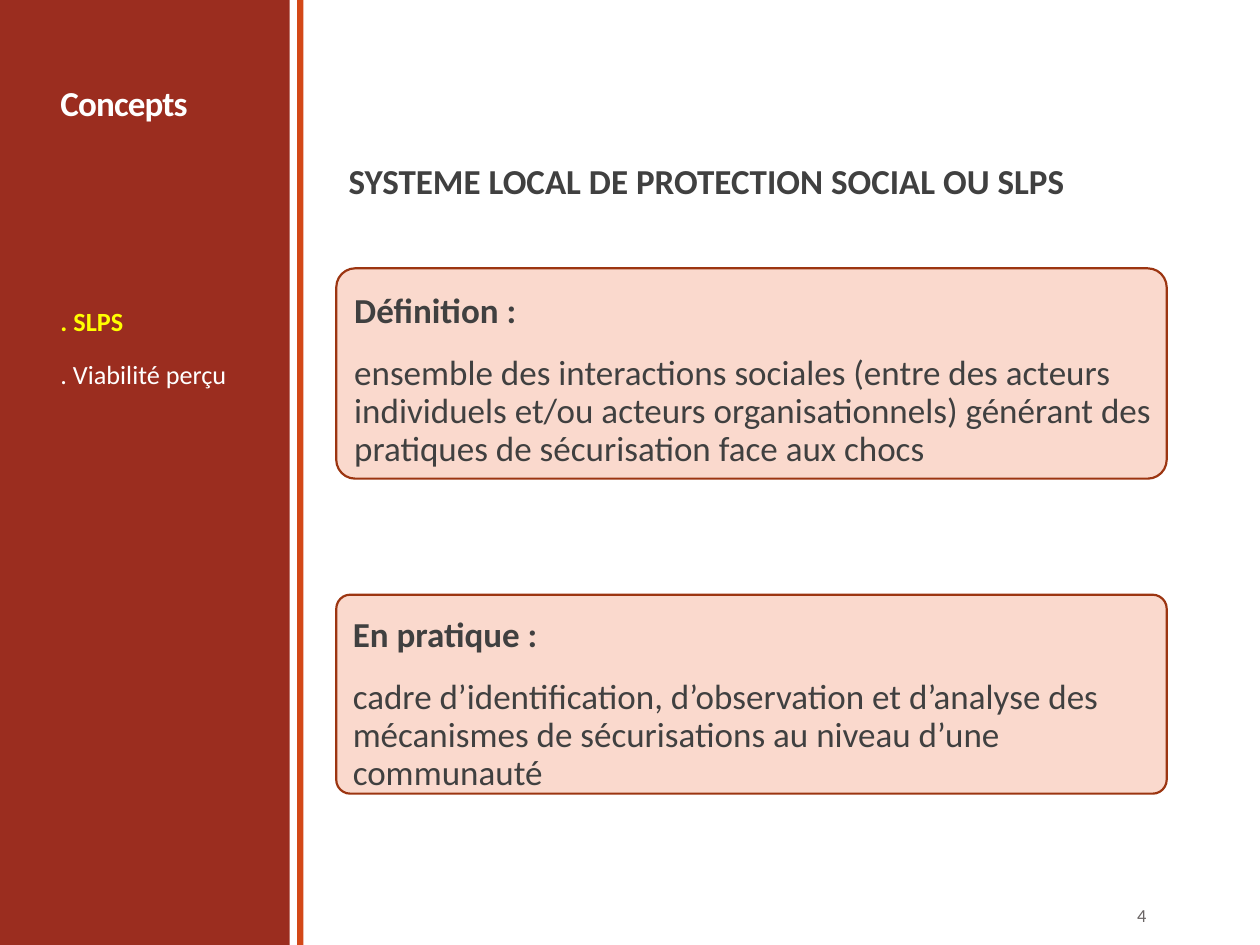
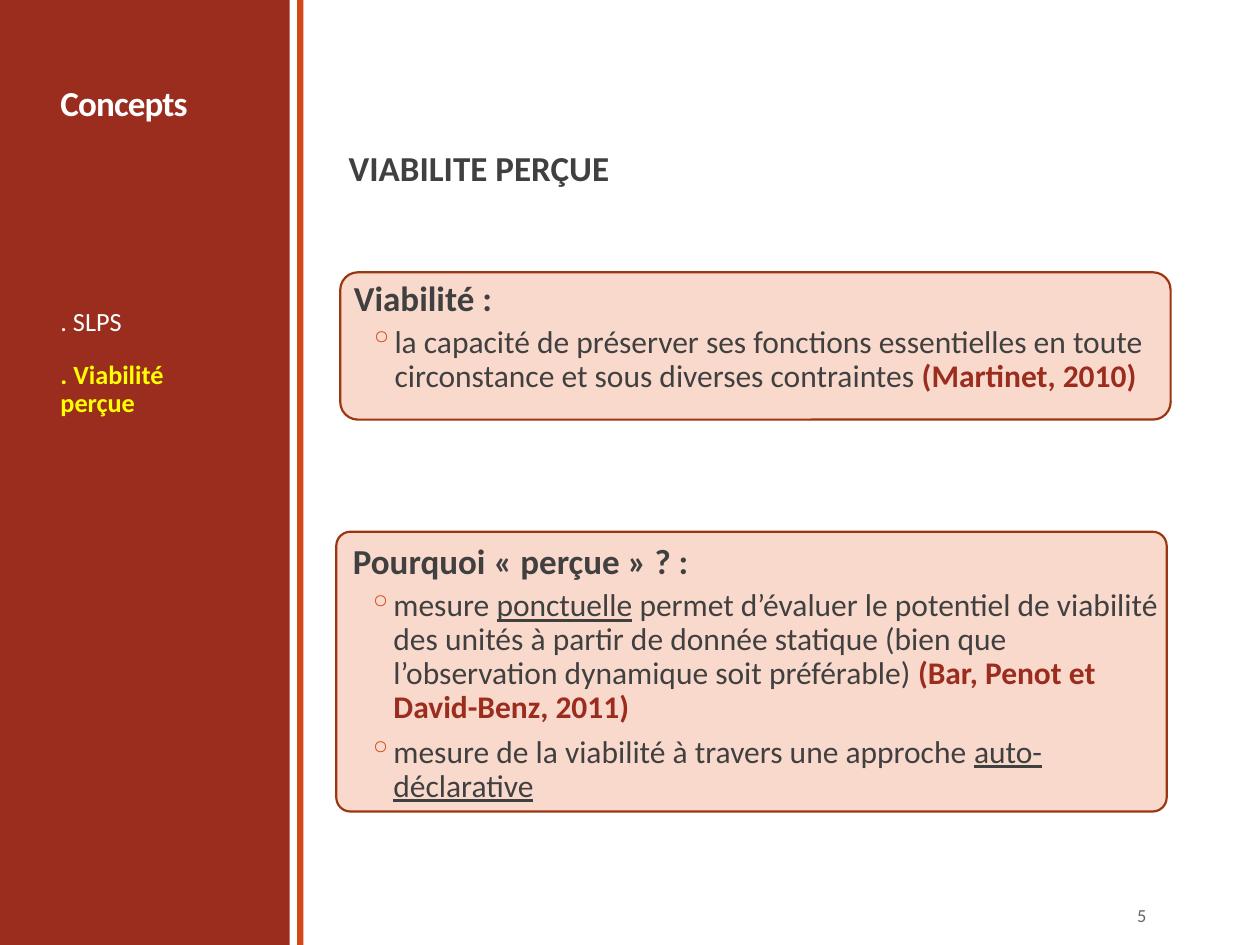
from lxml.etree import SubElement
from pptx import Presentation
from pptx.dml.color import RGBColor
from pptx.enum.shapes import MSO_SHAPE as Kind
from pptx.enum.text import MSO_ANCHOR as Anchor, PP_ALIGN as Align
from pptx.oxml.ns import qn
from pptx.util import Cm, Pt

FONT = "Calibri"
RED, ORANGE, EDGE, PINK = "9B2D1F", "D34817", "9C3511", "FAD9CD"
WHITE, YELLOW, DARK, GREY = "FFFFFF", "FFFF00", "404040", "696464"
WIDE, HIGH = 25.4, 19.05
COL, SPAN = 6.78, 16.74      # main column: left and width
PAD = 0.25                   # text inset within the column
SIDE = 0.97                  # left of the sidebar texts

# Run styles: keyword arguments for add_run
HEAD = dict(size=20, bold=True)
BODY = dict(size=20)
ITEM = dict(size=18)
LINE = dict(size=18, under=True)
CITE = dict(size=18, bold=True, color=RED)


def paint(code):
    return RGBColor.from_string(code)


def add_run(para, text, size, color=DARK, bold=False, under=False):
    run = para.add_run()
    run.text = text
    font = run.font
    font.name, font.size, font.bold = FONT, Pt(size), bold
    font.color.rgb = paint(color)
    if under:
        font.underline = True
    return run


def add_para(frame, runs, space=0.9, before=12, after=2):
    """Add a paragraph, using the empty first one when it is free."""
    para = frame.paragraphs[0]
    if para.runs:
        para = frame.add_paragraph()
    else:
        before = 0
    para.line_spacing = space
    para.space_before, para.space_after = Pt(before), Pt(after)
    for text, style in runs:
        add_run(para, text, **style)
    return para


def add_mark(para):
    """Give a paragraph a hanging orange bullet."""
    props = para._p.get_or_add_pPr()
    props.set("marL", str(Cm(0.82)))
    props.set("indent", str(-Cm(0.51)))
    tint = SubElement(props, qn("a:buClr"))
    SubElement(tint, qn("a:srgbClr")).set("val", ORANGE)
    SubElement(props, qn("a:buChar")).set("char", "◦")


def set_frame(frame, left=PAD, top=0.13, right=PAD, anchor=Anchor.TOP):
    frame.word_wrap = True
    frame.vertical_anchor = anchor
    frame.margin_left, frame.margin_right = Cm(left), Cm(right)
    frame.margin_top, frame.margin_bottom = Cm(top), Cm(0.13)
    return frame


def add_text(slide, box, **inset):
    shape = slide.shapes.add_textbox(*map(Cm, box))
    return set_frame(shape.text_frame, **inset)


def add_box(slide, kind, box, fill):
    shape = slide.shapes.add_shape(kind, *map(Cm, box))
    shape.shadow.inherit = False
    shape.fill.solid()
    shape.fill.fore_color.rgb = paint(fill)
    shape.line.fill.background()
    return shape


def add_side(slide, links, now):
    """Sidebar: band, stripe, title and the list of concepts."""
    add_box(slide, Kind.RECTANGLE, (0, 0, 5.84, HIGH), RED)
    add_box(slide, Kind.RECTANGLE, (5.99, 0, 0.13, HIGH), ORANGE)
    frame = add_text(slide, (SIDE, 1.65, 4.19, 4.04))
    para = add_para(frame, [("Concepts", dict(HEAD, color=WHITE))], space=0.85)
    para.runs[0]._r.get_or_add_rPr().set("spc", "-50")

    frame = add_text(slide, (SIDE, 6.1, 4.19, 11.4))
    for spot, link in enumerate(links):
        live = spot == now
        style = dict(size=15, bold=live, color=YELLOW if live else WHITE)
        add_para(frame, [(link, style)])


def add_card(slide, box, curve, top, head, body, marks):
    """Rounded card: a heading over plain or bulleted paragraphs."""
    card = add_box(slide, Kind.ROUNDED_RECTANGLE, box, PINK)
    card.adjustments[0] = curve
    card.line.color.rgb = paint(EDGE)
    card.line.width = Pt(1.25)
    # Text keeps to the column even when the card is shifted
    shift = box[0] - COL
    frame = set_frame(card.text_frame, PAD - shift, top, shift)
    add_para(frame, [(head, HEAD)]).alignment = Align.LEFT
    for runs in body:
        gaps = dict(before=2, after=4) if marks else {}
        para = add_para(frame, runs, **gaps)
        para.alignment = Align.LEFT
        if marks:
            add_mark(para)


def add_page(slide, page):
    frame = add_text(slide, (20.62, 17.93, 2.74, 1.02), anchor=Anchor.MIDDLE)
    para = add_para(frame, [(str(page), dict(size=10.5, color=GREY))],
                    space=1.0, after=0)
    para.alignment = Align.RIGHT


def add_slide(deck, page, links, now, title, top, cards, marks=False):
    slide = deck.slides.add_slide(deck.slide_layouts[6])
    add_side(slide, links, now)
    frame = add_text(slide, (COL, top, SPAN, 1.05))
    add_para(frame, [(title, HEAD)])
    for card in cards:
        add_card(slide, *card, marks)
    add_page(slide, page)


# Cards: box, corner, top inset, heading, paragraphs of runs
SYSTEM = [
    ((COL, 5.41, SPAN, 4.24), 0.09, 0.39, "Définition :", [
        [("ensemble des interactions sociales (entre des acteurs individuels "
          "et/ou acteurs organisationnels) générant des pratiques de "
          "sécurisation face aux chocs", BODY)]]),
    ((COL, 11.99, SPAN, 4.01), 0.07, 0.37, "En pratique :", [
        [("cadre d’identification, d’observation et d’analyse des mécanismes "
          "de sécurisations au niveau d’une communauté", BODY)]]),
]
VIABLE = [
    ((6.86, 5.49, SPAN, 2.97), 0.12, 0.08, "Viabilité :", [
        [("la capacité de préserver ses fonctions essentielles en toute "
          "circonstance et sous diverses contraintes ", ITEM),
         ("(Martinet, 2010)", CITE)]]),
    ((COL, 10.72, SPAN, 5.64), 0.05, 0.18, "Pourquoi « perçue » ? :", [
        [("mesure ", ITEM), ("ponctuelle", LINE),
         (" permet d’évaluer le potentiel de viabilité des unités à partir de "
          "donnée statique (bien que l’observation dynamique soit "
          "préférable) ", ITEM),
         ("(Bar, Penot et David-Benz, 2011)", CITE)],
        [("mesure de la viabilité à travers une approche ", ITEM),
         ("auto-déclarative", LINE)]]),
]


def main():
    deck = Presentation()
    deck.slide_width, deck.slide_height = Cm(WIDE), Cm(HIGH)
    add_slide(deck, 4, [". SLPS", ". Viabilité perçu"], 0,
              "SYSTEME LOCAL DE PROTECTION SOCIAL OU SLPS", 3.18, SYSTEM)
    add_slide(deck, 5, [". SLPS", ". Viabilité perçue"], 1,
              "VIABILITE PERÇUE", 2.92, VIABLE, marks=True)
    deck.save("out.pptx")


if __name__ == "__main__":
    main()
